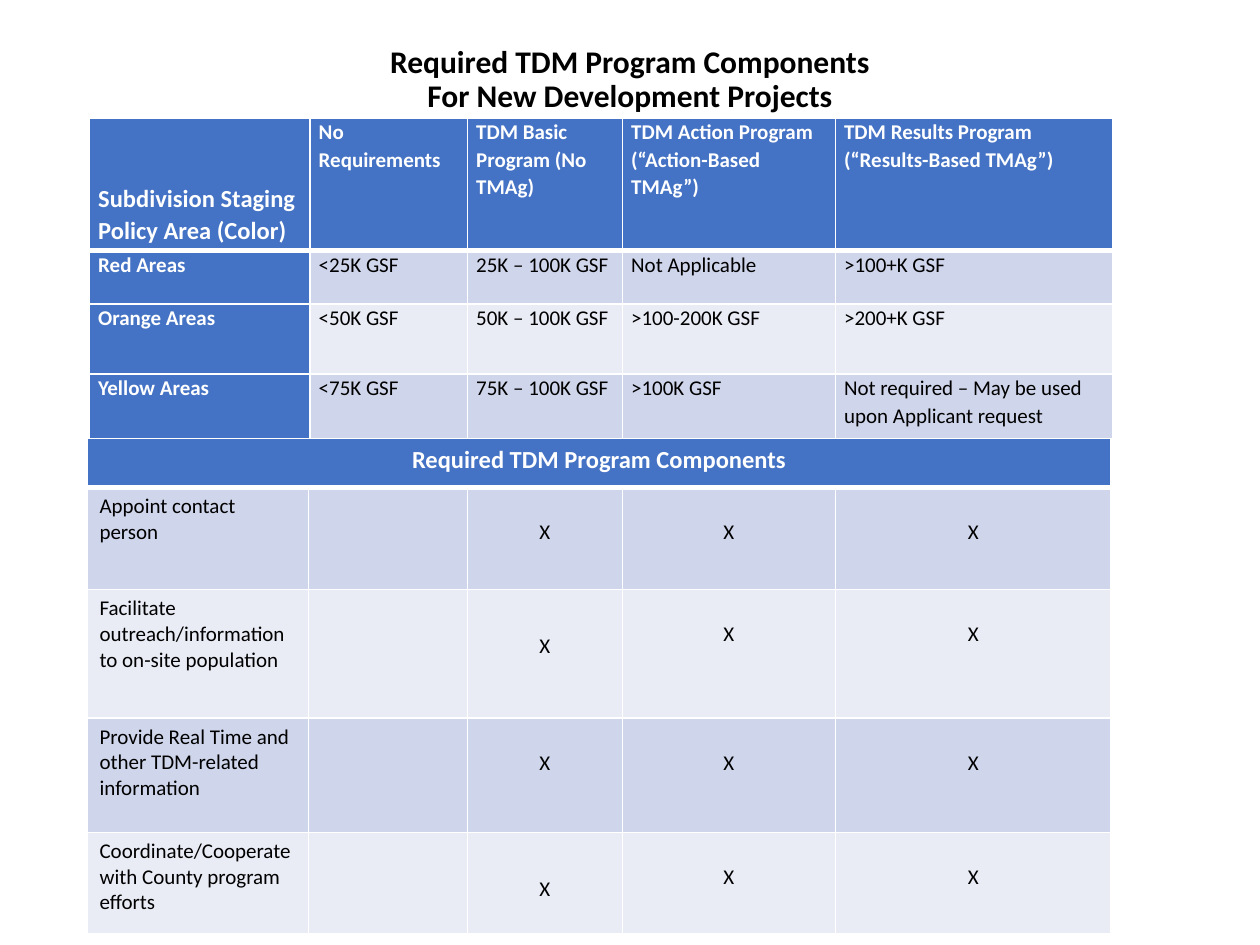
import pptx
import pptx.util
import pptx.dml.color
import pptx.enum.text
import pptx.oxml
import pptx.oxml.ns

Align = pptx.enum.text.PP_ALIGN
Anchor = pptx.enum.text.MSO_ANCHOR

THEME = {
    "font": "Calibri",
    "blue": "4472C4", "band": ["CFD5EA", "E9EBF5"],
    "white": "FFFFFF", "black": "000000",
    "title": 18, "heading": 14, "body": 12,
}

presentation = pptx.Presentation()
presentation.slide_width = pptx.util.Inches(10)
presentation.slide_height = pptx.util.Inches(7.5)
slide = presentation.slides.add_slide(presentation.slide_layouts[6])

# Lengths are hundredths of the slide's width (column) and height (row)
column = presentation.slide_width / 100
row = presentation.slide_height / 100


def write(frame, text, size=THEME["body"], color=THEME["black"], bold=False,
          align=Align.LEFT, spacing=1.0):
    """Fill a text frame, one paragraph for each line of text."""
    frame.word_wrap = True
    frame.text = text
    for paragraph in frame.paragraphs:
        paragraph.alignment = align
        paragraph.line_spacing = spacing
        paragraph.font.name = THEME["font"]
        paragraph.font.size = pptx.util.Pt(size)
        paragraph.font.bold = bold
        paragraph.font.color.rgb = pptx.dml.color.RGBColor.from_string(color)


def add_grid(left, top, widths, heights, fill_for):
    """Add a table with white rules, a thick one below its first row."""
    shape = slide.shapes.add_table(
        len(heights), len(widths), int(left * column), int(top * row),
        int(sum(widths) * column), int(sum(heights) * row))
    table = shape.table
    for item, width in zip(table.columns, widths):
        item.width = int(width * column)
    for item, height in zip(table.rows, heights):
        item.height = int(height * row)
    for r in range(len(heights)):
        for c in range(len(widths)):
            cell = table.cell(r, c)
            properties = cell._tc.get_or_add_tcPr()
            for side in "LRTB":
                thick = (r, side) in [(0, "B"), (1, "T")]
                properties.append(pptx.oxml.parse_xml(
                    f'<a:ln{side} {pptx.oxml.ns.nsdecls("a")} '
                    f'w="{pptx.util.Pt(3 if thick else 1)}"><a:solidFill>'
                    f'<a:srgbClr val="{THEME["white"]}"/>'
                    f'</a:solidFill></a:ln{side}>'))
            cell.fill.solid()
            cell.fill.fore_color.rgb = pptx.dml.color.RGBColor.from_string(fill_for(r, c))
    return table


# Title
title = slide.shapes.add_textbox(
    int(8.1 * column), int(3.1 * row), int(83.8 * column), int(10.8 * row))
write(title.text_frame,
      "Required TDM Program Components\vFor New Development Projects",
      size=THEME["title"], bold=True, align=Align.CENTER, spacing=0.9)
title.text_frame.vertical_anchor = Anchor.MIDDLE

# Program thresholds by policy area
thresholds = [
    ["Subdivision Staging Policy Area (Color)", "No Requirements",
     "TDM Basic Program (No TMAg)", "TDM Action Program (“Action-Based TMAg”)",
     "TDM Results Program\n(“Results-Based TMAg”)"],
    ["Red Areas", "<25K GSF", "25K – 100K GSF", "Not Applicable", ">100+K GSF"],
    ["Orange Areas", "<50K GSF", "50K – 100K GSF", ">100-200K GSF", ">200+K GSF"],
    ["Yellow Areas", "<75K GSF", "75K – 100K GSF", ">100K GSF",
     "Not required – May be used upon Applicant request"],
]
threshold_table = add_grid(
    7.1, 12.5, [17.5, 12.5, 12.3, 16.9, 22], [14, 5.7, 7.4, 6.8],
    lambda r, c: THEME["band"][(r - 1) % 2] if r and c else THEME["blue"])
for r, texts in enumerate(thresholds):
    for c, text in enumerate(texts):
        cell = threshold_table.cell(r, c)
        is_heading = r == 0 or c == 0
        is_corner = r == 0 and c == 0
        cell.margin_left = cell.margin_right = int(0.7 * column)
        cell.margin_top = int(6.8 * row) if is_corner else 0
        cell.margin_bottom = 0
        write(cell.text_frame, text, bold=is_heading, spacing=1.07,
              size=THEME["heading" if is_corner else "body"],
              color=THEME["white" if is_heading else "black"])

# Required components: label and drop of the first mark, in rows
components = [
    ("Appoint contact person", 3.4),
    ("Facilitate outreach/information to on-site population", 4.7),
    ("Provide Real Time and other TDM-related information", 3.4),
    ("Coordinate/Cooperate with County program efforts", 4.7),
]
usual_drop = 3.4
component_table = add_grid(
    6.9, 46.4, [17.6, 12.6, 12.3, 16.9, 21.9], [5.2, 10.8, 13.6, 12.1, 10.7],
    lambda r, c: THEME["band"][(r - 1) % 2] if r else THEME["blue"])
heading = component_table.cell(0, 0)
heading.merge(component_table.cell(0, 4))
write(heading.text_frame, "Required TDM Program Components",
      size=THEME["heading"], color=THEME["white"], bold=True, align=Align.CENTER)
for r, (label, first_drop) in enumerate(components, start=1):
    write(component_table.cell(r, 0).text_frame, label)
    for c, drop in zip([2, 3, 4], [first_drop, usual_drop, usual_drop]):
        cell = component_table.cell(r, c)
        cell.margin_top = int(drop * row)
        write(cell.text_frame, "X", align=Align.CENTER)

presentation.save("out.pptx")
